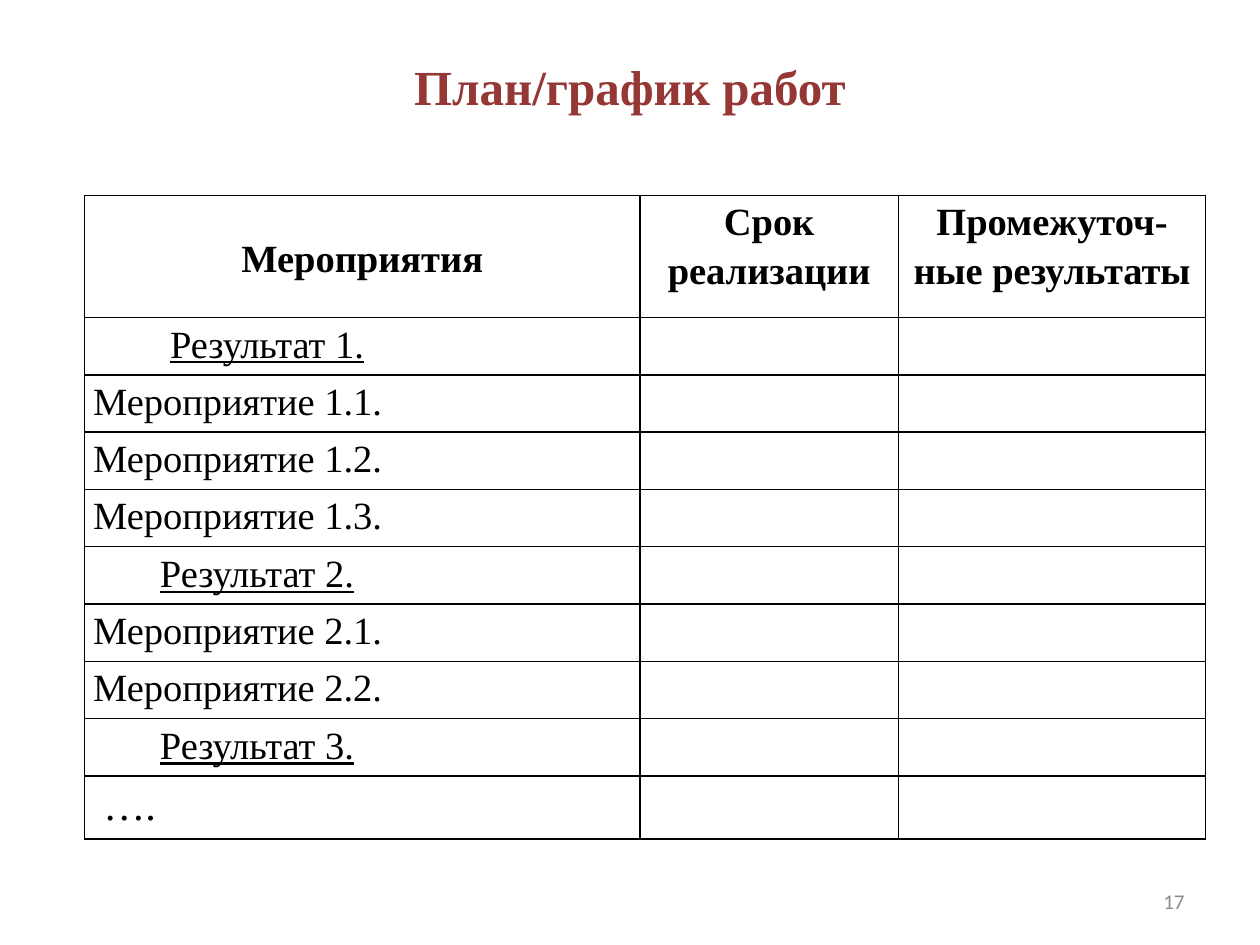
from lxml import etree
from pptx import Presentation
from pptx.dml.color import RGBColor
from pptx.enum import text as t
from pptx.oxml import ns
from pptx.util import Inches, Pt

HUES = {"title": "953735", "ink": "000000", "page": "8C8C8C", "back": "FFFFFF"}
SERIF = "Times New Roman"
LEFT, MID, RIGHT = t.PP_ALIGN.LEFT, t.PP_ALIGN.CENTER, t.PP_ALIGN.RIGHT


def write(frame, words, hue, align, **style):
    frame.word_wrap = True
    frame.vertical_anchor = t.MSO_ANCHOR.MIDDLE
    para = frame.paragraphs[0]
    para.alignment = align
    run = para.add_run()
    run.text = words
    run.font.color.rgb = RGBColor.from_string(HUES[hue])
    for key, val in style.items():
        setattr(run.font, key, val)
    return para


def edge(cell):
    props = cell._tc.get_or_add_tcPr()
    for spot, side in enumerate(("lnL", "lnR", "lnT", "lnB")):
        line = etree.Element(ns.qn("a:" + side), w=str(Pt(1)))
        fill = etree.SubElement(line, ns.qn("a:solidFill"))
        etree.SubElement(fill, ns.qn("a:srgbClr"), val=HUES["ink"])
        props.insert(spot, line)


deck = Presentation()
deck.slide_width, deck.slide_height = Inches(10), Inches(7.5)
slide = deck.slides.add_slide(deck.slide_layouts[6])

title = slide.shapes.add_textbox(Inches(0.5), Inches(0.3), Inches(9), Inches(0.77))
write(title.text_frame, "План/график работ", "title", MID,
      name=SERIF, size=Pt(28), bold=True)
page = slide.shapes.add_textbox(Inches(7.17), Inches(6.95), Inches(2.33), Inches(0.4))
write(page.text_frame, "17", "page", RIGHT, name="Calibri", size=Pt(12))

heads = ["Мероприятия", "Срок реализации", "Промежуточ-ные результаты"]
plan = [
    ("Результат 1.", 0.61),
    ("Мероприятие 1.1.", 0),
    ("Мероприятие 1.2.", 0),
    ("Мероприятие 1.3.", 0),
    ("Результат 2.", 0.53),
    ("Мероприятие 2.1.", 0),
    ("Мероприятие 2.2.", 0),
    ("Результат 3.", 0.53),
    ("….", 0.08),
]
wides = [4.41, 2.05, 2.44]
highs = [0.97] + [0.455] * 8 + [0.5]

grid = slide.shapes.add_table(len(highs), len(wides), Inches(0.67), Inches(1.55),
                              Inches(sum(wides)), Inches(sum(highs))).table
for col, wide in zip(grid.columns, wides):
    col.width = Inches(wide)
for row, high in zip(grid.rows, highs):
    row.height = Inches(high)

form = {"margin_left": Inches(0.07), "margin_right": Inches(0.07),
        "margin_top": 0, "margin_bottom": 0}
gaps = {"line_spacing": 1.15, "space_before": Pt(3), "space_after": Pt(3)}
for cell in grid.iter_cells():
    for key, val in form.items():
        setattr(cell, key, val)
    cell.fill.solid()
    cell.fill.fore_color.rgb = RGBColor.from_string(HUES["back"])
    edge(cell)

items = [(0, c, words, 0) for c, words in enumerate(heads)]
items += [(r, 0, words, dent) for r, (words, dent) in enumerate(plan, 1)]
for r, c, words, dent in items:
    cell = grid.cell(r, c)
    size = 24 if words == "…." else 22
    para = write(cell.text_frame, words, "ink", LEFT if r else MID, name=SERIF,
                 size=Pt(size), bold=r == 0, underline=words.startswith("Результат"))
    first = r == 0 and c == 0
    cell.vertical_anchor = t.MSO_ANCHOR.MIDDLE if first else t.MSO_ANCHOR.TOP
    for key, val in gaps.items():
        setattr(para, key, val)
    if dent:
        para._p.get_or_add_pPr().set("marL", str(Inches(dent)))

deck.save("out.pptx")
